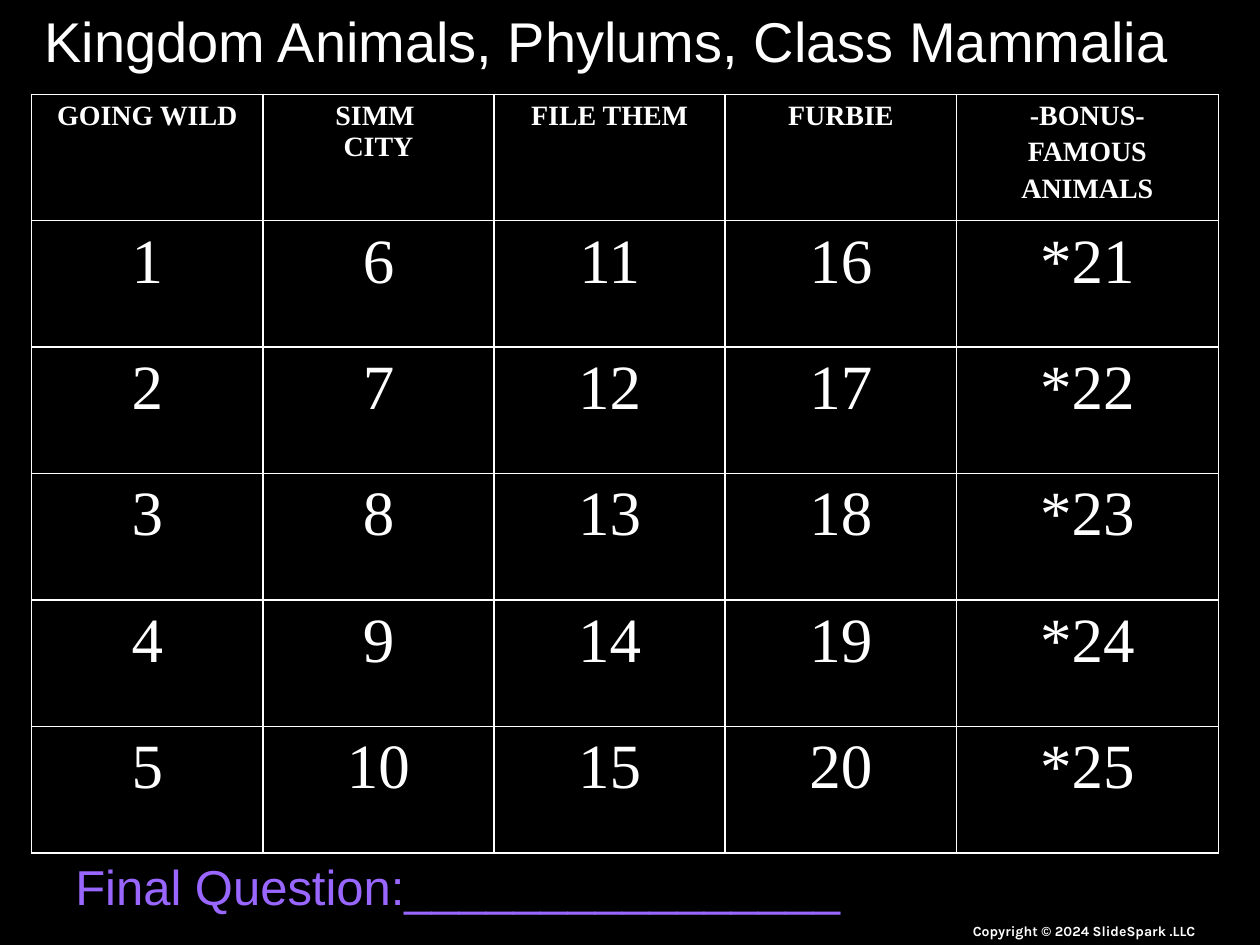
from lxml.etree import SubElement
from pptx import Presentation
from pptx.dml.color import RGBColor
from pptx.enum.text import MSO_ANCHOR, MSO_AUTO_SIZE, PP_ALIGN
from pptx.oxml.ns import qn
from pptx.util import Cm, Pt

BLACK = RGBColor(0x00, 0x00, 0x00)
WHITE = RGBColor(0xFF, 0xFF, 0xFF)
PURPLE = RGBColor(0x99, 0x66, 0xFF)


def add_text(paragraph, text, font, size, color, bold=False):
    for index, line in enumerate(text.split("\n")):
        if index:
            paragraph.add_line_break()
        run = paragraph.add_run()
        run.text = line
        run.font.name = font
        run.font.size = Pt(size)
        run.font.bold = bold
        run.font.color.rgb = color


def add_borders(cell):
    properties = cell._tc.get_or_add_tcPr()
    for side in ("lnL", "lnR", "lnT", "lnB"):
        line = SubElement(properties, qn(f"a:{side}"), w=str(Pt(1)))
        fill = SubElement(line, qn("a:solidFill"))
        SubElement(fill, qn("a:srgbClr"), val=str(WHITE))


prs = Presentation()
prs.slide_width = Cm(25.4)
prs.slide_height = Cm(19.05)
slide = prs.slides.add_slide(prs.slide_layouts[5])
slide.background.fill.solid()
slide.background.fill.fore_color.rgb = BLACK

categories = [
    ["GOING WILD"],
    ["SIMM \nCITY"],
    ["FILE THEM"],
    ["FURBIE"],
    ["-BONUS-", "FAMOUS", "ANIMALS"],
]
questions = 5
board = slide.shapes.add_table(
    questions + 1, len(categories), Cm(0.64), Cm(1.9), Cm(23.92), Cm(15.3)
).table
for row in board.rows:
    row.height = Cm(2.55)

for col, category in enumerate(categories):
    bonus = col == len(categories) - 1
    board.columns[col].width = Cm(5.28 if bonus else 4.66)
    for row in range(questions + 1):
        cell = board.cell(row, col)
        add_borders(cell)
        cell.fill.solid()
        cell.fill.fore_color.rgb = BLACK
        number = f"{'*' if bonus else ''}{col * questions + row}"
        lines = [number] if row else category
        for index, line in enumerate(lines):
            frame = cell.text_frame
            paragraph = frame.add_paragraph() if index else frame.paragraphs[0]
            paragraph.alignment = PP_ALIGN.CENTER
            if index:
                paragraph.space_before = Pt(3)
            add_text(paragraph, line, "Times New Roman", 36 if row else 16, WHITE, not row)

title = slide.shapes.title
copyright_line = slide.shapes.add_textbox(0, 0, 0, 0)
final_question = slide.shapes.add_textbox(0, 0, 0, 0)

for box, bounds, align, text, font, size, color, bold in [
    (copyright_line, (15.67, 18.47, 8.69, 0.58), PP_ALIGN.RIGHT,
     "Copyright © 2024 SlideSpark .LLC", "Karla", 8, WHITE, True),
    (title, (0.64, 0, 24.76, 1.6), PP_ALIGN.LEFT,
     "Kingdom Animals, Phylums, Class Mammalia", "Arial", 32, WHITE, False),
    (final_question, (1.27, 17.15, 16.71, 1.45), PP_ALIGN.LEFT,
     "Final Question:________________", "Arial", 28, PURPLE, False),
]:
    box.left, box.top, box.width, box.height = [Cm(length) for length in bounds]
    frame = box.text_frame
    frame.word_wrap = True
    frame.auto_size = MSO_AUTO_SIZE.NONE
    frame.vertical_anchor = MSO_ANCHOR.TOP
    frame.paragraphs[0].alignment = align
    add_text(frame.paragraphs[0], text, font, size, color, bold)

prs.save("out.pptx")
